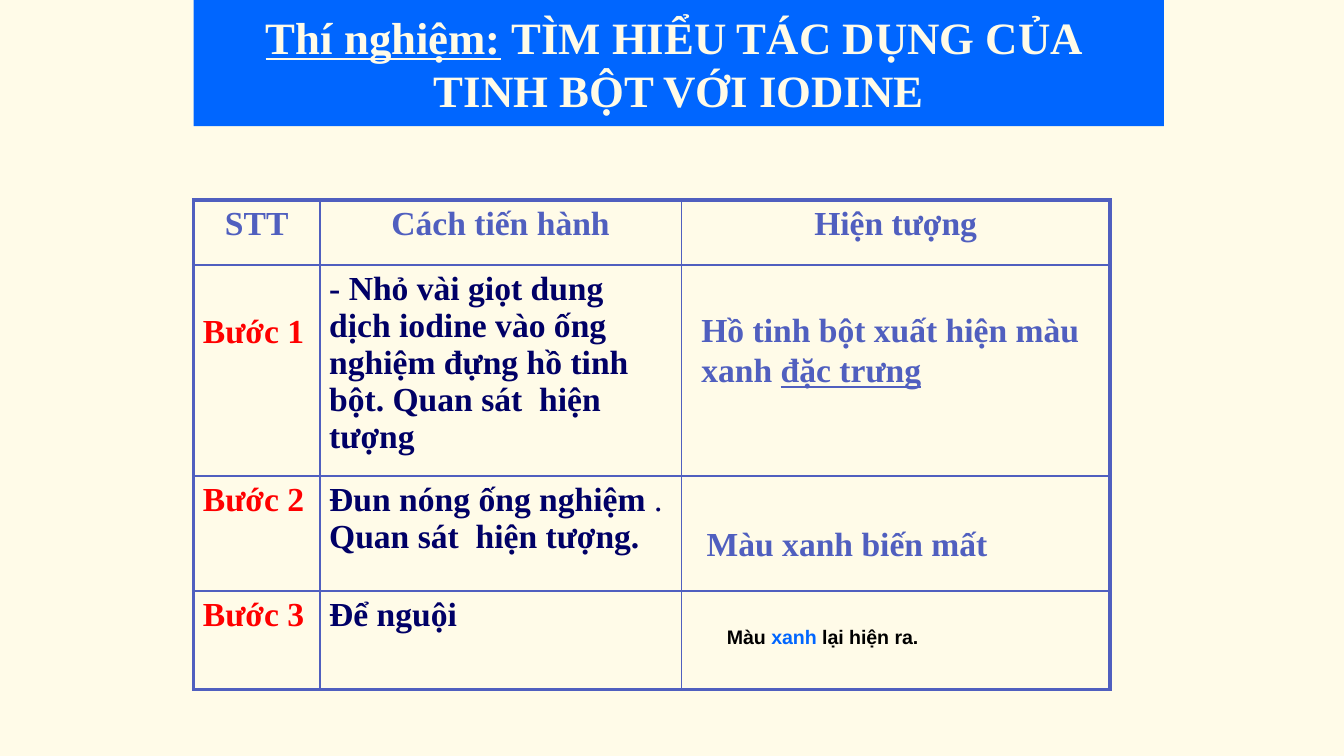
from lxml import etree
from pptx import Presentation
from pptx.dml.color import RGBColor
from pptx.enum.shapes import MSO_SHAPE
from pptx.enum.text import MSO_ANCHOR, PP_ALIGN
from pptx.oxml.ns import qn
from pptx.util import Inches, Pt

RECTANGLE = MSO_SHAPE.RECTANGLE
MIDDLE = MSO_ANCHOR.MIDDLE
CENTER, LEFT = PP_ALIGN.CENTER, PP_ALIGN.LEFT

COLORS = {
    "cream": "FFFBE8",
    "blue": "0066FF",
    "violet": "505FBF",
    "red": "FF0000",
    "navy": "000066",
    "black": "000000",
}
SERIF = {"name": "Times New Roman", "size": Pt(18), "bold": True}
TITLE = {**SERIF, "size": Pt(24)}
SANS = {"name": "Arial", "size": Pt(10.5), "bold": True}


def write_runs(paragraph, runs, base, alignment=LEFT):
    """Add (text, color name, extra font values) runs over a base format."""
    paragraph.alignment = alignment
    for text, color, extra in runs:
        run = paragraph.add_run()
        run.text = text
        for attribute, value in {**base, **extra}.items():
            setattr(run.font, attribute, value)
        run.font.color.rgb = RGBColor.from_string(COLORS[color])


def add_cell_border(cell, side, width):
    properties = cell._tc.get_or_add_tcPr()
    line = etree.SubElement(properties, qn("a:ln" + side), w=str(Pt(width)))
    fill = etree.SubElement(line, qn("a:solidFill"))
    etree.SubElement(fill, qn("a:srgbClr"), val=COLORS["violet"])


# Widescreen slide, 16:9
presentation = Presentation()
presentation.slide_width = Inches(10)
presentation.slide_height = Inches(10 * 9 / 16)
slide = presentation.slides.add_slide(presentation.slide_layouts[6])
slide.background.fill.solid()
slide.background.fill.fore_color.rgb = RGBColor.from_string(COLORS["cream"])

# Table of steps: each cell is a list of runs
column_widths = [0.94, 2.69, 3.19]
row_heights = [0.48, 1.57, 0.86, 0.73]
rows = [
    [[(heading, "violet", {})] for heading in ("STT", "Cách tiến hành", "Hiện tượng")],
    [
        [("Bước 1", "red", {})],
        [("- Nhỏ vài giọt dung dịch iodine vào ống nghiệm đựng hồ tinh bột. "
          "Quan sát  hiện tượng", "navy", {})],
        [],
    ],
    [
        [("Bước 2", "red", {})],
        [("Đun nóng ống nghiệm ", "navy", {}), (". ", "navy", {"bold": False}),
         ("Quan sát  hiện tượng.", "navy", {})],
        [],
    ],
    [[("Bước 3", "red", {})], [("Để nguội", "navy", {})], []],
]
table = slide.shapes.add_table(
    len(rows), len(column_widths), Inches(1.44), Inches(1.49),
    Inches(sum(column_widths)), Inches(sum(row_heights)),
).table
table.first_row = False
table.horz_banding = False
for column, width in zip(table.columns, column_widths):
    column.width = Inches(width)
for row, height in zip(table.rows, row_heights):
    row.height = Inches(height)

last_row, last_column = len(rows) - 1, len(column_widths) - 1
for row_index, row in enumerate(rows):
    for column_index, runs in enumerate(row):
        cell = table.cell(row_index, column_index)
        cell.margin_left = cell.margin_right = Inches(0.07)
        cell.margin_top = cell.margin_bottom = Inches(0.04)
        outer_sides = {
            "L": column_index == 0,
            "R": column_index == last_column,
            "T": row_index == 0,
            "B": row_index == last_row,
        }
        for side, is_outer in outer_sides.items():
            add_cell_border(cell, side, 2.25 if is_outer else 1)
        cell.fill.background()
        write_runs(cell.text_frame.paragraphs[0], runs, SERIF,
                   CENTER if row_index == 0 else LEFT)
table.cell(1, 0).margin_top = Inches(0.36)

# Title banner
banner = slide.shapes.add_shape(
    RECTANGLE, Inches(1.44), Inches(0), Inches(7.22), Inches(0.94))
banner.shadow.inherit = False
banner.fill.solid()
banner.fill.fore_color.rgb = RGBColor.from_string(COLORS["blue"])
banner.line.fill.background()
banner.text_frame.word_wrap = False
banner.text_frame.vertical_anchor = MIDDLE
write_runs(banner.text_frame.paragraphs[0], [
    ("Thí nghiệm:", "cream", {"underline": True}),
    (" TÌM HIỂU TÁC DỤNG CỦA ", "cream", {}),
], TITLE, CENTER)
write_runs(banner.text_frame.add_paragraph(),
           [("TINH BỘT VỚI IODINE", "cream", {})], TITLE, CENTER)

# Observations laid over the last column
observations = [
    (5.12, 2.25, 3.25, 0.71, SERIF, [
        ("Hồ tinh bột xuất hiện màu xanh ", "violet", {}),
        ("đặc trưng", "violet", {"underline": True}),
    ]),
    (5.16, 3.84, 3.25, 0.4, SERIF, [("Màu xanh biến mất", "violet", {})]),
    (5.31, 4.6, 2.88, 0.45, SANS, [
        ("Màu ", "black", {}),
        ("xanh ", "blue", {}),
        ("lại hiện ra.", "black", {}),
    ]),
]
for *position, base, runs in observations:
    text_box = slide.shapes.add_textbox(*map(Inches, position))
    text_box.text_frame.word_wrap = True
    write_runs(text_box.text_frame.paragraphs[0], runs, base)

presentation.save("out.pptx")
